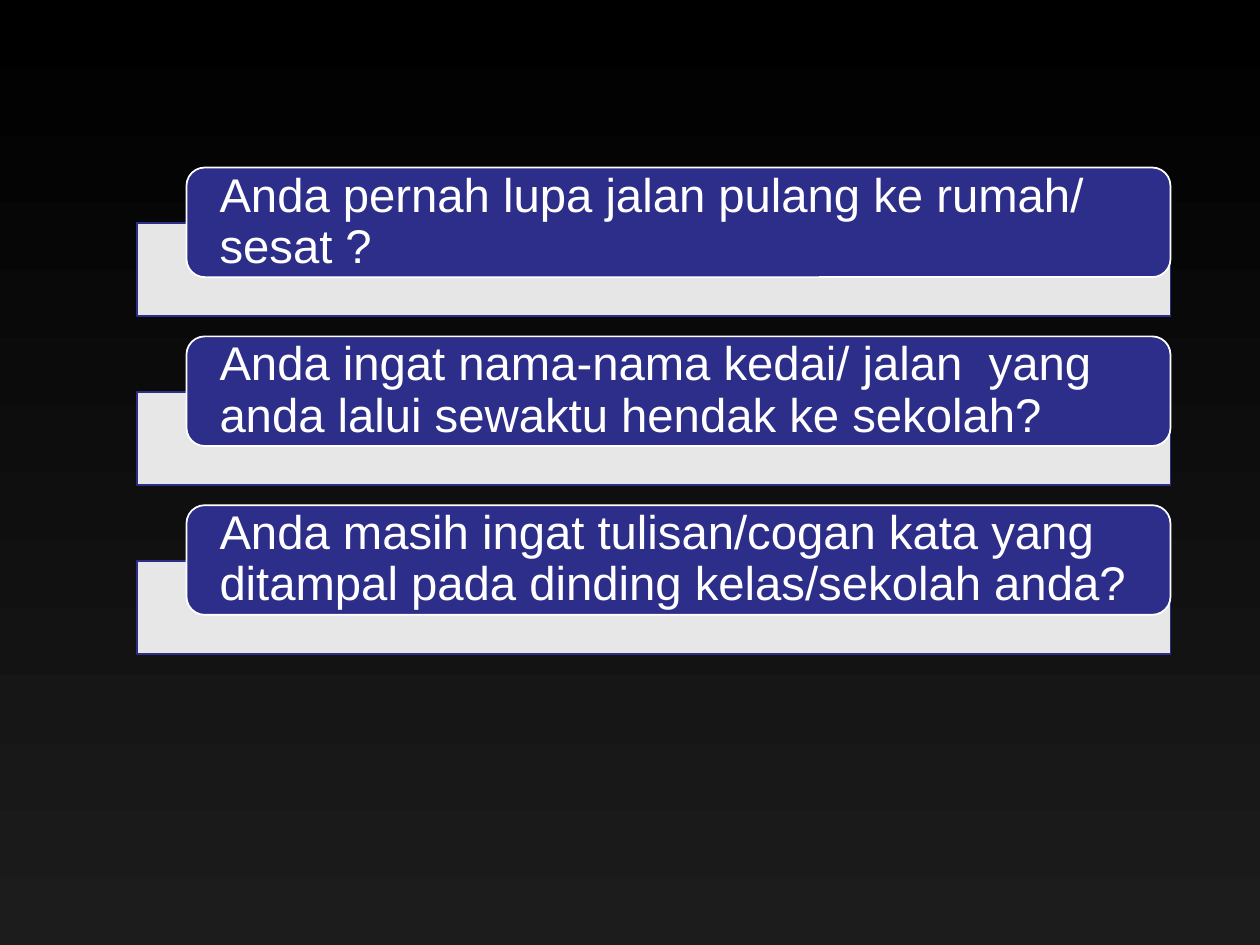
from dataclasses import dataclass

from lxml.etree import SubElement
from pptx import Presentation
from pptx.dml.color import RGBColor
from pptx.enum.shapes import MSO_SHAPE
from pptx.enum.text import MSO_ANCHOR, PP_ALIGN
from pptx.oxml.ns import qn
from pptx.shapes.autoshape import Shape
from pptx.slide import Slide
from pptx.util import Inches, Pt


@dataclass(frozen=True)
class Theme:
    background_top: RGBColor = RGBColor(0x00, 0x00, 0x00)
    background_bottom: RGBColor = RGBColor(0x1C, 0x1C, 0x1C)
    accent: RGBColor = RGBColor(0x2D, 0x2D, 0x8A)
    light: RGBColor = RGBColor(0xFF, 0xFF, 0xFF)
    panel_opacity: int = 90
    font: str = "Arial"
    question_size: Pt = Pt(27)
    outline: Pt = Pt(1)


@dataclass(frozen=True)
class Box:
    left: float
    top: float
    width: float
    height: float


@dataclass(frozen=True)
class Question:
    text: str
    top: float


THEME = Theme()
FIRST_TOP = 1.33
ROW_STEP = 1.34
PANEL_OFFSET = 0.44
QUESTION_TEXTS = (
    "Anda pernah lupa jalan pulang ke rumah/ sesat ?",
    "Anda ingat nama-nama kedai/ jalan  yang anda lalui sewaktu hendak ke sekolah?",
    "Anda masih ingat tulisan/cogan kata yang ditampal pada dinding kelas/sekolah anda?",
)
QUESTIONS = [
    Question(text, FIRST_TOP + row * ROW_STEP)
    for row, text in enumerate(QUESTION_TEXTS)
]


def paint_background(slide: Slide) -> None:
    fill = slide.background.fill
    fill.gradient()
    fill.gradient_angle = 270
    first_stop, last_stop = fill.gradient_stops
    first_stop.color.rgb = THEME.background_top
    first_stop.position = 0
    last_stop.color.rgb = THEME.background_bottom
    last_stop.position = 1


def add_box(slide: Slide, kind: MSO_SHAPE, box: Box,
            fill: RGBColor, line: RGBColor) -> Shape:
    shape = slide.shapes.add_shape(
        kind, Inches(box.left), Inches(box.top),
        Inches(box.width), Inches(box.height))
    shape.shadow.inherit = False
    shape.fill.solid()
    shape.fill.fore_color.rgb = fill
    shape.line.color.rgb = line
    shape.line.width = THEME.outline
    return shape


def set_opacity(shape: Shape, percent: int) -> None:
    color = shape._element.spPr.find(qn("a:solidFill")).find(qn("a:srgbClr"))
    SubElement(color, qn("a:alpha")).set("val", str(percent * 1000))


def write_question(shape: Shape, text: str) -> None:
    frame = shape.text_frame
    frame.word_wrap = True
    frame.vertical_anchor = MSO_ANCHOR.MIDDLE
    frame.margin_left = frame.margin_right = Inches(0.22)
    frame.margin_top = frame.margin_bottom = Inches(0)
    paragraph = frame.paragraphs[0]
    paragraph.alignment = PP_ALIGN.LEFT
    paragraph.line_spacing = 0.9
    run = paragraph.add_run()
    run.text = text
    run.font.name = THEME.font
    run.font.size = THEME.question_size
    run.font.color.rgb = THEME.light


def add_question(slide: Slide, question: Question) -> None:
    """Draw the pale panel and, overlapping it, the labelled rounded bar."""
    panel = add_box(slide, MSO_SHAPE.RECTANGLE,
                    Box(1.09, question.top + PANEL_OFFSET, 8.2, 0.74),
                    THEME.light, THEME.accent)
    set_opacity(panel, THEME.panel_opacity)
    bar = add_box(slide, MSO_SHAPE.ROUNDED_RECTANGLE,
                  Box(1.48, question.top, 7.81, 0.87),
                  THEME.accent, THEME.light)
    write_question(bar, question.text)


def main() -> None:
    presentation = Presentation()
    presentation.slide_width = Inches(10)
    presentation.slide_height = Inches(7.5)
    slide = presentation.slides.add_slide(presentation.slide_layouts[6])
    paint_background(slide)
    for question in QUESTIONS:
        add_question(slide, question)
    presentation.save("out.pptx")


if __name__ == "__main__":
    main()
